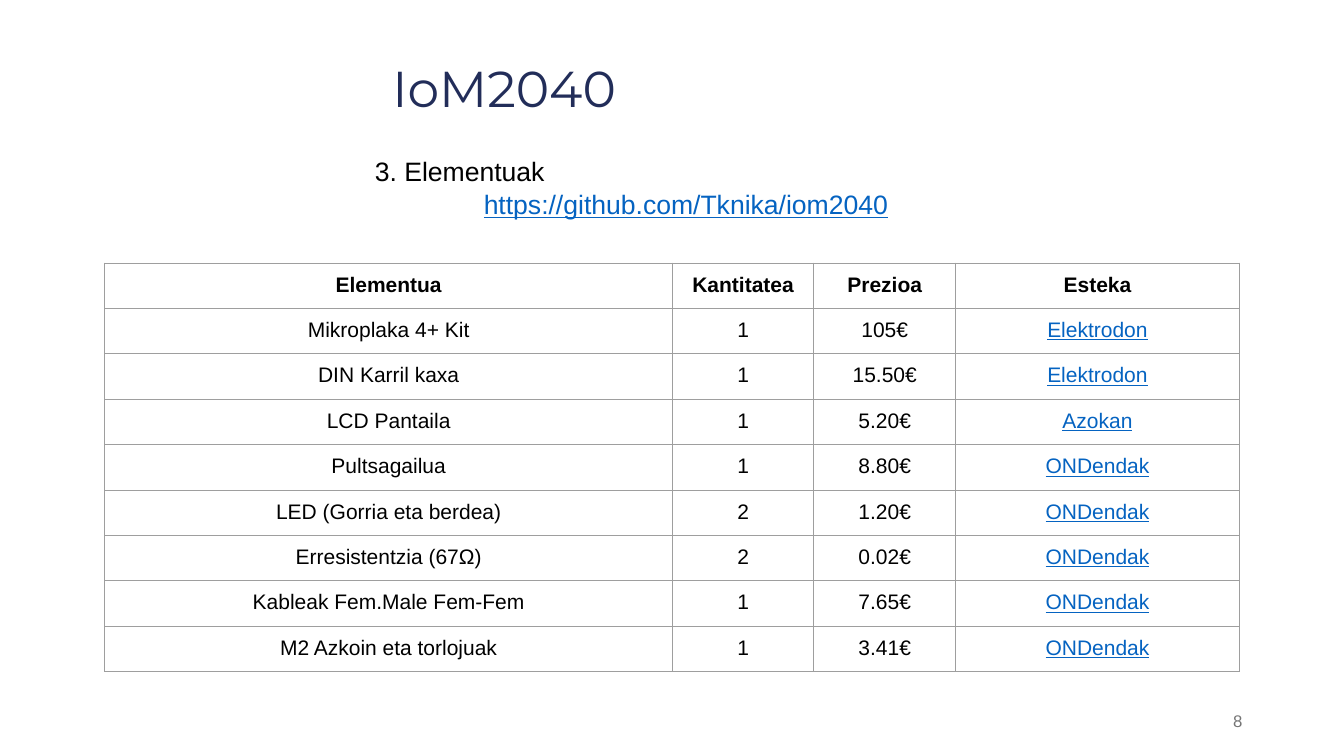
from lxml.etree import SubElement
from pptx import Presentation
from pptx.dml.color import RGBColor
from pptx.enum.text import MSO_ANCHOR, PP_ALIGN
from pptx.oxml.ns import qn
from pptx.util import Inches, Pt

COLORS = {
    "title": "222D59",
    "text": "000000",
    "link": "0563C1",
    "number": "757575",
    "border": "9E9E9E",
}
COLUMN_WIDTHS = [5.63, 1.4, 1.41, 2.81]
ROW_HEIGHT = 0.43
PARTS = [
    ("Elementua", "Kantitatea", "Prezioa", "Esteka"),
    ("Mikroplaka 4+ Kit", "1", "105€", "Elektrodon"),
    ("DIN Karril kaxa", "1", "15.50€", "Elektrodon"),
    ("LCD Pantaila", "1", "5.20€", "Azokan"),
    ("Pultsagailua", "1", "8.80€", "ONDendak"),
    ("LED (Gorria eta berdea)", "2", "1.20€", "ONDendak"),
    ("Erresistentzia (67Ω)", "2", "0.02€", "ONDendak"),
    ("Kableak Fem.Male Fem-Fem", "1", "7.65€", "ONDendak"),
    ("M2 Azkoin eta torlojuak", "1", "3.41€", "ONDendak"),
]


class SlideBuilder:
    """Holds the text style and the current slide, and adds elements to it."""

    def __init__(self, slide, font="Arial"):
        self.slide = slide
        self.font = font

    def add_run(self, paragraph, text, size, color="text", bold=False, font=None):
        run = paragraph.add_run()
        run.text = text
        run.font.name = font or self.font
        run.font.size = Pt(size)
        run.font.bold = bold
        run.font.underline = color == "link"
        run.font.color.rgb = RGBColor.from_string(COLORS[color])

    def add_text_box(self, left, top, width, height, anchor=MSO_ANCHOR.MIDDLE):
        shape = self.slide.shapes.add_textbox(
            Inches(left), Inches(top), Inches(width), Inches(height)
        )
        frame = shape.text_frame
        frame.word_wrap = True
        frame.vertical_anchor = anchor
        return frame

    def add_line(self, paragraph, text, indent):
        paragraph._p.get_or_add_pPr().set("marL", str(Inches(indent)))
        paragraph.line_spacing = 1.05
        self.add_run(paragraph, text, 19, "link" if "://" in text else "text")

    def add_borders(self, cell):
        properties = cell._tc.get_or_add_tcPr()
        for side in ("a:lnL", "a:lnR", "a:lnT", "a:lnB"):
            line = SubElement(properties, qn(side), w=str(Pt(0.75)))
            fill = SubElement(line, qn("a:solidFill"))
            SubElement(fill, qn("a:srgbClr"), val=COLORS["border"])

    def add_cell(self, cell, text, bold, color):
        cell.margin_left = cell.margin_right = Inches(0.1)
        cell.margin_top = cell.margin_bottom = Inches(0.1)
        self.add_borders(cell)
        cell.fill.background()
        paragraph = cell.text_frame.paragraphs[0]
        paragraph.alignment = PP_ALIGN.CENTER
        self.add_run(paragraph, text, 15, color, bold)

    def add_table(self, left, top, widths, row_height, rows):
        table = self.slide.shapes.add_table(
            len(rows), len(widths), Inches(left), Inches(top),
            Inches(sum(widths)), Inches(row_height * len(rows)),
        ).table
        table.horz_banding = False
        for column, width in zip(table.columns, widths):
            column.width = Inches(width)
        for row_index, (row, values) in enumerate(zip(table.rows, rows)):
            row.height = Inches(row_height)
            header = row_index == 0
            for column_index, value in enumerate(values):
                is_link = not header and column_index == len(widths) - 1
                color = "link" if is_link else "text"
                self.add_cell(table.cell(row_index, column_index), value, header, color)


def main():
    presentation = Presentation()
    presentation.slide_width = Inches(13.33)
    presentation.slide_height = Inches(7.5)
    builder = SlideBuilder(presentation.slides.add_slide(presentation.slide_layouts[6]))

    title = builder.add_text_box(0.5, 0.63, 9, 0.47).paragraphs[0]
    title.alignment = PP_ALIGN.CENTER
    builder.add_run(title, "IoM2040", 36, "title", font="Montserrat")

    body = builder.add_text_box(0.7, 1.47, 11.97, 1.08, MSO_ANCHOR.TOP)
    builder.add_line(body.paragraphs[0], "3. Elementuak", 2.92)
    builder.add_line(body.add_paragraph(), "https://github.com/Tknika/iom2040", 4)

    builder.add_table(1.04, 2.61, COLUMN_WIDTHS, ROW_HEIGHT, PARTS)

    number = builder.add_text_box(9.42, 6.95, 3, 0.4).paragraphs[0]
    number.alignment = PP_ALIGN.RIGHT
    builder.add_run(number, "8", 12, "number")

    presentation.save("out.pptx")


if __name__ == "__main__":
    main()
